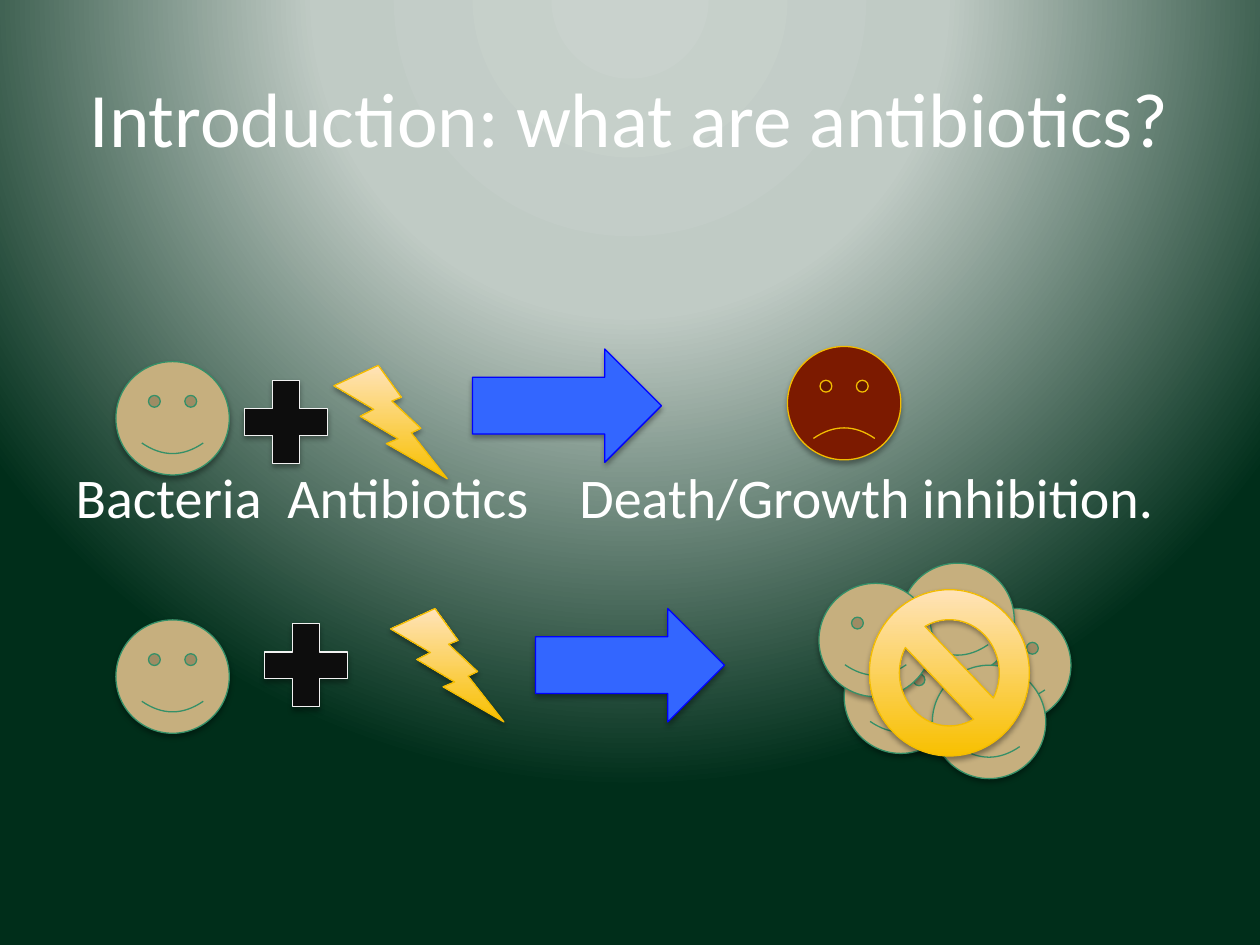
from dataclasses import dataclass

from pptx import Presentation
from pptx.dml.color import RGBColor as RGB
from pptx.enum.shapes import MSO_SHAPE as Geo
from pptx.enum.text import MSO_ANCHOR as Anchor, MSO_AUTO_SIZE as Fit, PP_ALIGN as Align
from pptx.oxml import parse_xml
from pptx.oxml.ns import nsdecls, qn
from pptx.util import Inches, Pt


@dataclass(frozen=True)
class Theme:
    font: str = "Calibri"
    head: int = 44
    body: int = 32
    edge: float = 0.75
    text: str = "FFFFFF"
    gold: tuple = ("F8C000", "FFE3B9")
    trim: str = "F3BC00"
    tan: str = "C6AF7E"
    green: str = "359068"
    red: str = "7C1A00"
    blue: str = "3366FF"
    navy: str = "0000FF"
    black: str = "0D0D0D"
    pale: str = "F2F2F2"
    glow: tuple = ((0, "C9D2CD"), (40, "C0CBC5"), (100, "002E1A"))


THEME = Theme()
SIDE = 0.9


def paint_back(slide):
    slide.background.fill.gradient()
    old = slide.element.find(".//" + qn("a:gradFill"))
    stops = "".join(
        f'<a:gs pos="{at * 1000}"><a:srgbClr val="{tone}"/></a:gs>'
        for at, tone in THEME.glow
    )
    new = parse_xml(
        f'<a:gradFill {nsdecls("a")} rotWithShape="1"><a:gsLst>{stops}</a:gsLst>'
        '<a:path path="circle"><a:fillToRect l="50000" t="-80000" r="50000" b="180000"/>'
        "</a:path></a:gradFill>"
    )
    old.getparent().replace(old, new)


def place(item, left, top, width, height):
    item.left, item.top = Inches(left), Inches(top)
    item.width, item.height = Inches(width), Inches(height)


def add_run(para, text, size):
    run = para.add_run()
    run.text = text
    run.font.name = THEME.font
    run.font.size = Pt(size)
    run.font.color.rgb = RGB.from_string(THEME.text)
    return run


def add_gap(para, extra):
    run = add_run(para, " ", THEME.body)
    run._r.get_or_add_rPr().set("spc", str(round(extra * 100)))


def add_title(slide, text):
    title = slide.shapes.title
    place(title, 0.5, 0.3, 9, 1.25)
    title.text_frame.vertical_anchor = Anchor.MIDDLE
    para = title.text_frame.paragraphs[0]
    para.alignment = Align.CENTER
    add_run(para, text, THEME.head)


def add_labels(slide, labels):
    body = slide.placeholders[1]
    place(body, 0.5, 1.75, 9, 4.75)
    frame = body.text_frame
    frame.auto_size = Fit.NONE
    frame.margin_top = Inches(1.92)
    para = frame.paragraphs[0]
    para.space_before = Pt(0)
    props = para._p.get_or_add_pPr()
    props.set("marL", "0")
    props.set("indent", "0")
    props.append(parse_xml(f'<a:buNone {nsdecls("a")}/>'))
    for label, extra in labels:
        add_run(para, label, THEME.body)
        if extra:
            add_gap(para, extra)


def add_form(slide, kind, left, top, fill, line, width=SIDE, height=SIDE):
    form = slide.shapes.add_shape(
        kind, Inches(left), Inches(top), Inches(width), Inches(height)
    )
    if isinstance(fill, tuple):
        form.fill.gradient()
        form.fill.gradient_angle = 90
        for stop, tone in zip(form.fill.gradient_stops, fill):
            stop.color.rgb = RGB.from_string(tone)
    else:
        form.fill.solid()
        form.fill.fore_color.rgb = RGB.from_string(fill)
    form.line.color.rgb = RGB.from_string(line)
    form.line.width = Pt(THEME.edge)
    form.shadow.inherit = False
    form._element.spPr.find(qn("a:effectLst")).append(parse_xml(
        f'<a:outerShdw {nsdecls("a")} blurRad="{Pt(3.1)}" dist="{Pt(1.8)}" '
        'dir="5400000" rotWithShape="0"><a:srgbClr val="000000">'
        '<a:alpha val="35000"/></a:srgbClr></a:outerShdw>'
    ))
    return form


def add_germ(slide, left, top):
    add_form(slide, Geo.SMILEY_FACE, left, top, THEME.tan, THEME.green)


def add_dead(slide, left, top):
    face = add_form(slide, Geo.SMILEY_FACE, left, top, THEME.red, THEME.trim)
    face.adjustments[0] = -0.047


def add_bolt(slide, left, top):
    add_form(slide, Geo.LIGHTNING_BOLT, left, top, THEME.gold, THEME.trim)


def add_plus(slide, left, top):
    add_form(slide, Geo.MATH_PLUS, left, top, THEME.black, THEME.pale)


def add_arrow(slide, left, top):
    add_form(slide, Geo.RIGHT_ARROW, left, top, THEME.blue, THEME.navy, width=1.5)


def add_row(slide, germ, plus, bolt, arrow):
    add_bolt(slide, *bolt)
    add_germ(slide, *germ)
    add_arrow(slide, *arrow)
    add_plus(slide, *plus)


def add_cluster(slide):
    spots = ((6.7, 5.08), (7.6, 4.83), (7.15, 4.47), (6.5, 4.63), (7.4, 5.28))
    for spot in spots:
        add_germ(slide, *spot)
    add_form(slide, Geo.NO_SYMBOL, 6.9, 4.68, THEME.gold, THEME.trim, 1.27, 1.32)


def main():
    deck = Presentation()
    deck.slide_width, deck.slide_height = Inches(10), Inches(7.5)
    slide = deck.slides.add_slide(deck.slide_layouts[1])
    paint_back(slide)
    add_title(slide, "Introduction: what are antibiotics?")
    add_labels(slide, (
        ("Bacteria", 7.2), ("Antibiotics", 21.7), ("Death/Growth inhibition.", 0),
    ))
    add_row(slide, (0.92, 2.87), (1.82, 2.9), (2.65, 2.9), (3.75, 2.77))
    add_dead(slide, 6.25, 2.75)
    add_row(slide, (0.92, 4.92), (1.98, 4.83), (3.1, 4.83), (4.25, 4.83))
    add_cluster(slide)
    deck.save("out.pptx")


if __name__ == "__main__":
    main()
